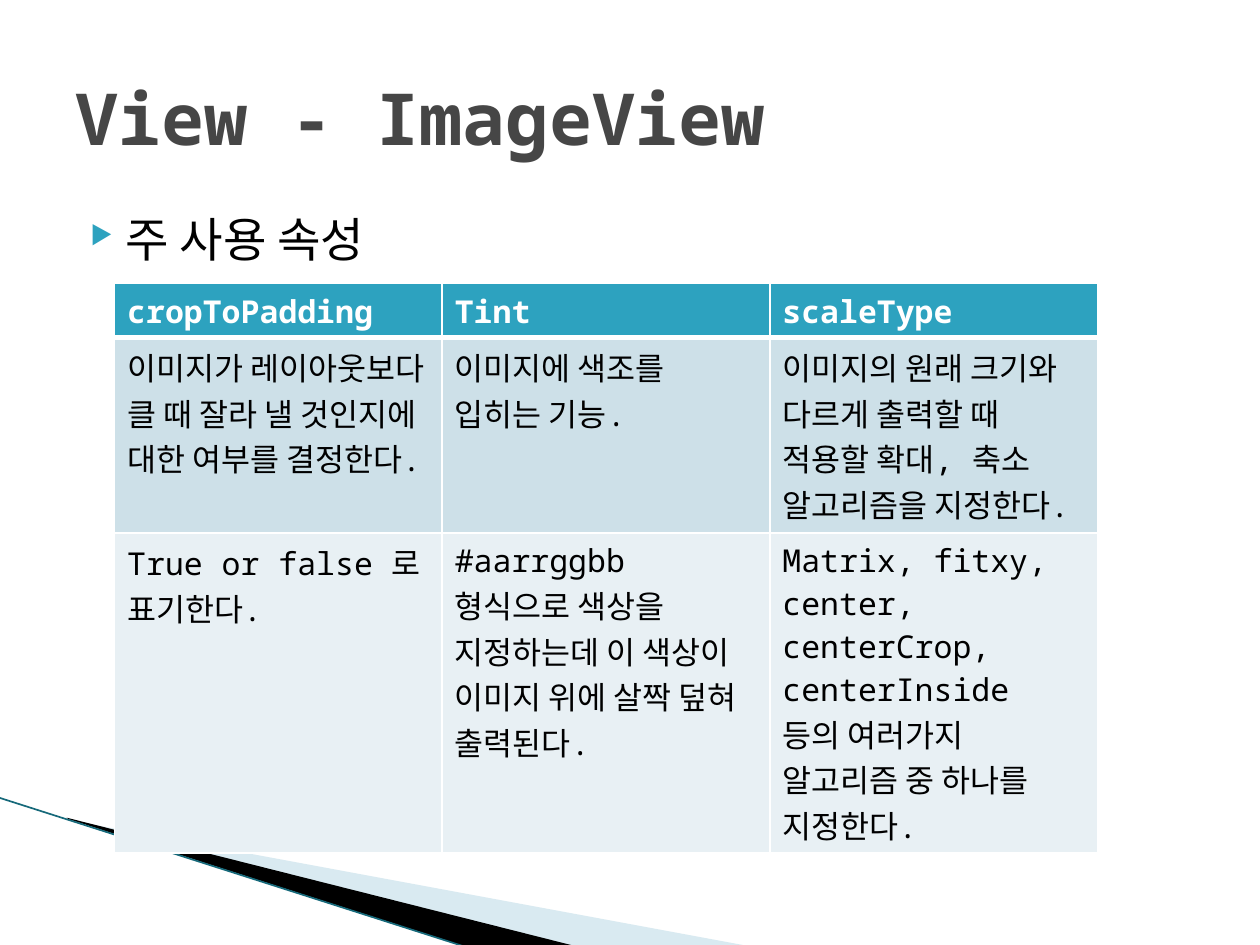
import pptx
import pptx.dml.color
import pptx.enum.shapes
import pptx.enum.text
import pptx.oxml.ns
import pptx.util
from lxml import etree

FONT = "Noto Sans Mono"
TEAL = "2DA2BF"
WIDE, HIGH = 10, 7.5
COL = 2.6
TALL = [0.43, 1.55, 2.54]
HEADS = ["cropToPadding", "Tint", "scaleType"]
ROWS = [
    HEADS,
    ["이미지가 레이아웃보다 클 때 잘라 낼 것인지에 대한 여부를 결정한다.",
     "이미지에 색조를 입히는 기능.",
     "이미지의 원래 크기와 다르게 출력할 때 적용할 확대, 축소 알고리즘을 지정한다."],
    ["True or false 로 표기한다.",
     "#aarrggbb 형식으로 색상을 지정하는데 이 색상이 이미지 위에 살짝 덮혀 출력된다.",
     "Matrix, fitxy, center, centerCrop, centerInside 등의 여러가지 알고리즘 중 하나를 지정한다."],
]
FILLS = [TEAL, "CDE0E8", "E8F0F4"]


def inch(*nums):
    return [pptx.util.Inches(n) for n in nums]


def color(code):
    return pptx.dml.color.RGBColor.from_string(code)


def paint(fill, code):
    fill.solid()
    fill.fore_color.rgb = color(code)


def node(base, tag, **attrs):
    item = etree.SubElement(base, pptx.oxml.ns.qn("a:" + tag))
    for key, val in attrs.items():
        item.set(key, str(val))
    return item


def write(frame, text, size=18, code="000000", bold=False):
    frame.word_wrap = True
    para = frame.paragraphs[0]
    para.alignment = pptx.enum.text.PP_ALIGN.LEFT
    run = para.add_run()
    run.text = text
    font = run.font
    font.size = pptx.util.Pt(size)
    font.bold = bold
    font.name = FONT
    font.color.rgb = color(code)
    return para


def bullet(para):
    props = para._p.get_or_add_pPr()
    left, hang = inch(0.4, -0.28)
    props.set("marL", str(left))
    props.set("indent", str(hang))
    node(node(props, "buClr"), "srgbClr", val=TEAL)
    node(props, "buSzPct", val=54000)
    node(props, "buChar", char="▶")


def wedge(slide, points, code, alpha=None):
    spots = [inch(*point) for point in points]
    path = slide.shapes.build_freeform(*spots[0], scale=1.0)
    path.add_line_segments(spots[1:], close=True)
    shape = path.convert_to_shape()
    shape.shadow.inherit = False
    paint(shape.fill, code)
    shape.line.fill.background()
    if alpha:
        tint = shape.fill._xPr.find(".//" + pptx.oxml.ns.qn("a:srgbClr"))
        node(tint, "alpha", val=alpha * 1000)


def stroke(slide, start, end, code, width):
    kind = pptx.enum.shapes.MSO_CONNECTOR.STRAIGHT
    line = slide.shapes.add_connector(kind, *inch(*start, *end))
    line.line.color.rgb = color(code)
    line.line.width = pptx.util.Pt(width)
    node(line._element.spPr, "effectLst")


def border(cell, base):
    props = cell._tc.get_or_add_tcPr()
    for side in "LRTB":
        width = pptx.util.Pt(base if side == "B" else 1)
        edge = node(props, "ln" + side, w=width)
        node(node(edge, "solidFill"), "srgbClr", val="FFFFFF")


def grid(slide):
    size = inch(0.91, 2.25, COL * len(HEADS), sum(TALL))
    table = slide.shapes.add_table(len(ROWS), len(HEADS), *size).table
    for r, texts in enumerate(ROWS):
        head = r == 0
        table.rows[r].height = pptx.util.Inches(TALL[r])
        for c, text in enumerate(texts):
            cell = table.cell(r, c)
            border(cell, 3 if head else 1)
            paint(cell.fill, FILLS[r])
            write(cell.text_frame, text, bold=head,
                  code="FFFFFF" if head else "000000")


def title(slide, text):
    shape = slide.shapes.title
    shape.left, shape.top, shape.width, shape.height = inch(
        0.05 * WIDE, 0.04 * HIGH, 0.9 * WIDE, 1.25)
    frame = shape.text_frame
    frame.auto_size = pptx.enum.text.MSO_AUTO_SIZE.NONE
    frame.vertical_anchor = pptx.enum.text.MSO_ANCHOR.MIDDLE
    write(frame, text, size=41, code="464646", bold=True)


def main():
    deck = pptx.Presentation()
    deck.slide_width, deck.slide_height = inch(WIDE, HIGH)
    slide = deck.slides.add_slide(deck.slide_layouts[5])
    wedge(slide, [(0.55, 6.51), (5.95, 7.51), (4.56, 7.51), (0.55, 6.5)],
          "A0CBDC", alpha=40)
    wedge(slide, [(0.53, 6.49), (4.57, 7.51), (3.72, 7.52), (0.54, 6.5)],
          "000000")
    stroke(slide, (-0.01, 6.33), (3.71, 7.52), "16697A", 0.95)
    box = slide.shapes.add_textbox(*inch(0.05 * WIDE, 1.62, 0.9 * WIDE, 4.95))
    bullet(write(box.text_frame, "주 사용 속성", size=27))
    title(slide, "View - ImageView")
    grid(slide)
    deck.save("out.pptx")


if __name__ == "__main__":
    main()
